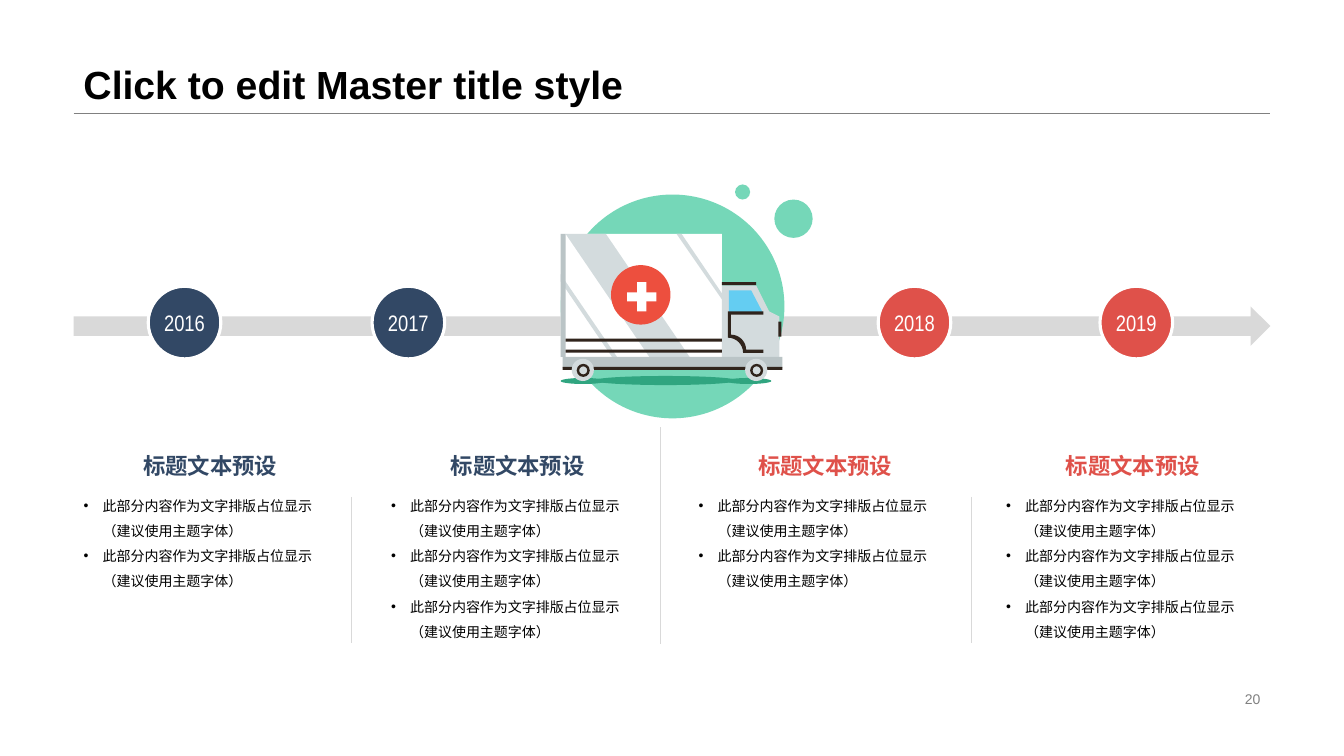
from math import cos, pi, sin

from lxml import etree
from pptx import Presentation
from pptx.dml.color import RGBColor
from pptx.enum.shapes import MSO_CONNECTOR, MSO_SHAPE
from pptx.enum.text import MSO_ANCHOR, PP_ALIGN
from pptx.oxml.ns import qn
from pptx.util import Emu, Pt

EMU_PER_PX = 9144
ELLIPSE, RECTANGLE = MSO_SHAPE.OVAL, MSO_SHAPE.RECTANGLE
DONUT, ARROW = MSO_SHAPE.DONUT, MSO_SHAPE.RIGHT_ARROW
STRAIGHT = MSO_CONNECTOR.STRAIGHT
LEFT, CENTER, RIGHT = PP_ALIGN.LEFT, PP_ALIGN.CENTER, PP_ALIGN.RIGHT
TOP, MIDDLE, BOTTOM = MSO_ANCHOR.TOP, MSO_ANCHOR.MIDDLE, MSO_ANCHOR.BOTTOM

COLORS = {
    "black": "000000", "white": "FFFFFF", "gray": "808080", "rule": "D9D9D9",
    "navy": "324865", "red": "DF514A", "mint": "75D7B8", "shadow": "30A580",
    "body": "D3DBDD", "steel": "BAC4C6", "cross": "ED4F3E", "glass": "64CDF2",
    "trim": "30241C",
}

HEADING = "标题文本预设"
BULLET = "此部分内容作为文字排版占位显示（建议使用主题字体）"
COLUMNS = [("navy", 2), ("navy", 3), ("red", 2), ("red", 3)]
MILESTONES = [("2016", 147, "navy"), ("2017", 369, "navy"),
              ("2018", 871, "red"), ("2019", 1091, "red")]
DIVIDERS = [(348, 493, 638), (655, 424, 639), (963, 493, 638)]

BACKDROP = [
    (ELLIPSE, "mint", (556, 193, 222, 222)),
    (ELLIPSE, "mint", (768, 198, 38, 38)),
    (ELLIPSE, "mint", (729, 183, 15, 15)),
    (ELLIPSE, "shadow", (720, 375, 45, 6)),
    (ELLIPSE, "shadow", (589, 373, 142, 9)),
    (ELLIPSE, "shadow", (556, 375, 45, 6)),
    (RECTANGLE, "white", (556, 232, 160, 122)),
]
PANELS = [
    ("body", [(750, 283), (763, 309), (773, 314), (773, 354), (716, 354), (716, 283)]),
    ("body", [(644, 354), (561, 232), (601, 232), (684, 354)]),
    ("body", [(607, 354), (556, 279), (556, 272), (612, 354)]),
    ("body", [(676, 232), (716, 291), (716, 297), (671, 232)]),
    ("glass", [(757, 311), (723, 311), (723, 288), (745, 288)]),
]
FITTINGS = [
    (RECTANGLE, "steel", (556, 232, 5, 122)),
    (ELLIPSE, "cross", (606, 263, 59, 59)),
    (RECTANGLE, "white", (632, 280, 9, 29)),
    (RECTANGLE, "white", (622, 290, 29, 9)),
    (RECTANGLE, "trim", (561, 336, 155, 3)),
    (RECTANGLE, "trim", (716, 280, 34, 3)),
    (RECTANGLE, "trim", (772, 319, 3, 15)),
    (RECTANGLE, "trim", (561, 347, 155, 3)),
    (RECTANGLE, "steel", (558, 354, 218, 11)),
    (RECTANGLE, "trim", (558, 364, 218, 3)),
]


def px(length):
    """Turn pixels into EMU."""
    return Emu(round(length * EMU_PER_PX))


def color(name):
    """Look up a colour by name."""
    return RGBColor.from_string(COLORS[name])


def paint(shape, fill):
    """Give a shape a flat fill without line or shadow."""
    shape.shadow.inherit = False
    shape.fill.solid()
    shape.fill.fore_color.rgb = color(fill)
    shape.line.fill.background()
    return shape


def add_preset(page, kind, fill, place):
    """Draw a flat preset shape."""
    return paint(page.shapes.add_shape(kind, *map(px, place)), fill)


def add_outline(page, fill, points):
    """Draw a flat closed polygon."""
    corners = [(px(x), px(y)) for x, y in points]
    builder = page.shapes.build_freeform(*corners[0])
    builder.add_line_segments(corners[1:], close=True)
    return paint(builder.convert_to_shape(), fill)


def add_rule(page, start, end, stroke):
    """Draw a hairline between two points."""
    rule = page.shapes.add_connector(STRAIGHT, *map(px, start + end))
    rule.line.color.rgb = color(stroke)
    rule.line.width = Pt(0.25)
    etree.SubElement(rule._element.spPr, qn("a:effectLst"))


def style(para, size, ink, align=LEFT, face="Arial", bold=False):
    """Set the alignment and font of a paragraph."""
    para.alignment = align
    para.font.size = Pt(size)
    para.font.name = face
    para.font.bold = bold
    para.font.color.rgb = color(ink)


def add_text(page, place, text, size, ink, align, anchor, bold=False):
    """Add a text box with one paragraph."""
    box = page.shapes.add_textbox(*map(px, place))
    frame = box.text_frame
    frame.word_wrap = True
    frame.vertical_anchor = anchor
    para = frame.paragraphs[0]
    para.text = text
    style(para, size, ink, align, bold=bold)
    return para


def add_bullets(page, place, count):
    """Add a text box of bulleted paragraphs."""
    frame = page.shapes.add_textbox(*map(px, place)).text_frame
    frame.word_wrap = True
    frame.vertical_anchor = TOP
    for index in range(count):
        para = frame.add_paragraph() if index else frame.paragraphs[0]
        para.text = BULLET
        para.line_spacing = 1.5
        properties = para._p.get_or_add_pPr()
        properties.set("marL", str(px(19)))
        properties.set("indent", str(px(-19)))
        etree.SubElement(properties, qn("a:buFont")).set("typeface", "Arial")
        etree.SubElement(properties, qn("a:buChar")).set("char", "•")
        style(para, 10, "black")


def add_milestone(page, year, left, fill):
    """Draw a year disc on the timeline."""
    disc = add_preset(page, ELLIPSE, fill, (left, 284, 72, 72))
    disc.line.color.rgb = color("white")
    disc.line.width = Pt(2.25)
    frame = disc.text_frame
    frame.word_wrap = False
    frame.vertical_anchor = MIDDLE
    para = frame.paragraphs[0]
    para.text = year
    style(para, 16, "white", CENTER, "Arial Narrow")


def add_wheel(page, left):
    """Draw a wheel with its dark ring."""
    add_preset(page, ELLIPSE, "body", (left, 356, 22, 22))
    ring = add_preset(page, DONUT, "trim", (left + 5, 361, 13, 13))
    ring.adjustments[0] = 0.19


def arc(center_x, center_y, radius, steps=8):
    """List the points of a quarter arc from top to right."""
    angles = [pi / 2 * step / steps for step in range(steps + 1)]
    return [(center_x + radius * sin(angle), center_y - radius * cos(angle))
            for angle in angles]


def add_truck(page):
    """Draw the ambulance truck in front of its discs."""
    for item in BACKDROP:
        add_preset(page, *item)
    for fill, points in PANELS:
        add_outline(page, fill, points)
    for item in FITTINGS:
        add_preset(page, *item)
    door = arc(722, 350, 15) + [(757, 350), (757, 347)]
    door += arc(725, 347, 15)[::-1] + [(725, 312), (757, 312), (757, 309), (722, 309)]
    add_outline(page, "trim", door)
    for left in (567, 739):
        add_wheel(page, left)


def main():
    """Build the timeline slide."""
    deck = Presentation()
    deck.slide_width, deck.slide_height = px(1333), px(750)
    page = deck.slides.add_slide(deck.slide_layouts[6])
    add_rule(page, (73, 112), (1260, 112), "gray")
    title = add_text(page, (73, 0, 1187, 112), "Click to edit Master title style",
                     28, "black", LEFT, BOTTOM, bold=True)
    title.line_spacing = 0.9
    add_text(page, (942, 682, 318, 23), "20", 10, "gray", RIGHT, MIDDLE)
    add_preset(page, ARROW, "rule", (73, 304, 1187, 39))
    add_truck(page)
    for milestone in MILESTONES:
        add_milestone(page, *milestone)
    for index, (ink, count) in enumerate(COLUMNS):
        left = 73 + 305 * index
        add_text(page, (left, 424, 271, 56), HEADING, 16, ink, CENTER, BOTTOM, bold=True)
        add_bullets(page, (left, 480, 271, 168), count)
    for x, top, bottom in DIVIDERS:
        add_rule(page, (x, top), (x, bottom), "rule")
    deck.save("out.pptx")


if __name__ == "__main__":
    main()
